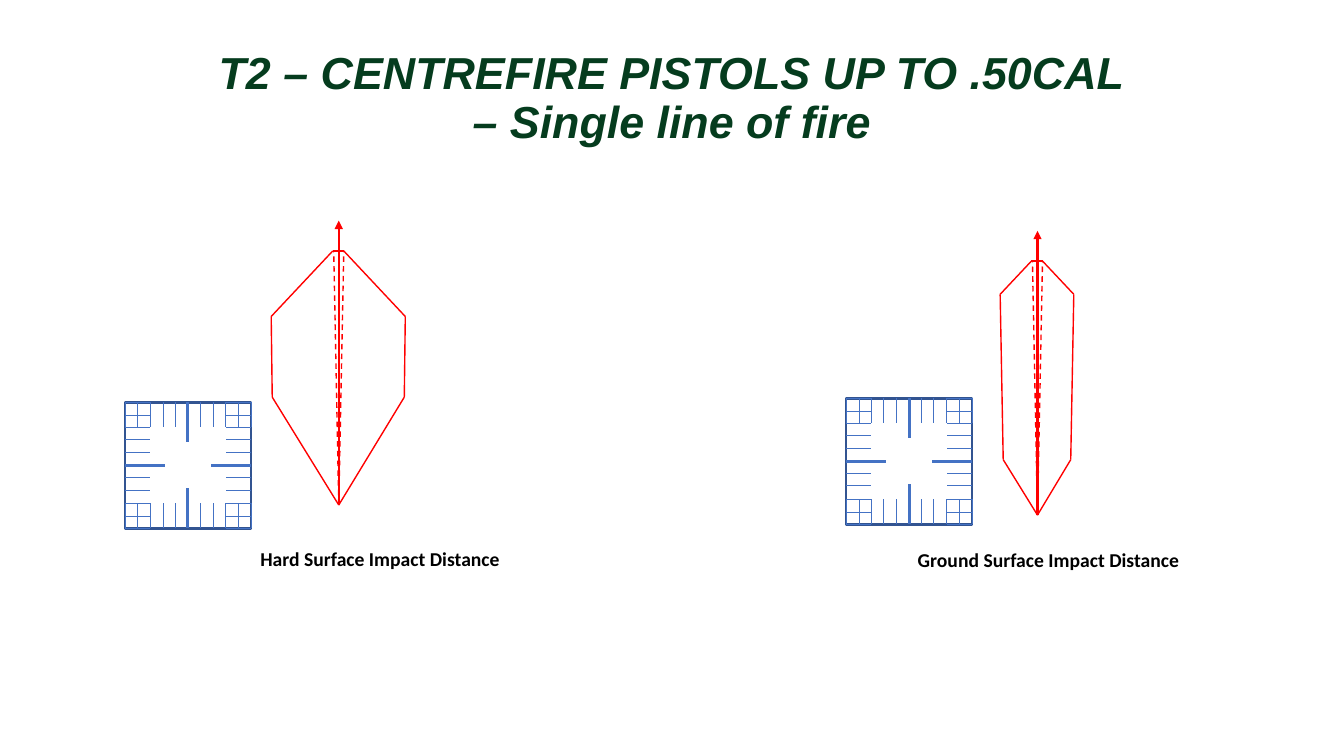
from lxml.etree import SubElement
from pptx import Presentation
from pptx.dml.color import RGBColor
from pptx.enum.dml import MSO_LINE
from pptx.enum.shapes import MSO_CONNECTOR, MSO_SHAPE
from pptx.enum.text import MSO_ANCHOR, PP_ALIGN
from pptx.oxml.ns import qn
from pptx.util import Pt

PX = 9144  # 100 px to the inch
THEME = {
    "title": RGBColor.from_string("053C1E"),
    "label": RGBColor.from_string("000000"),
    "fire": RGBColor.from_string("FF0000"),
    "frame": RGBColor.from_string("325491"),
    "tick": RGBColor.from_string("4472C4"),
    "title_size": 32,
    "label_size": 14,
}


def draw_line(group, start, end, color, width, dash=False, arrow=False):
    line = group.shapes.add_connector(
        MSO_CONNECTOR.STRAIGHT, *(round(v) * PX for v in (*start, *end)))
    line.line.color.rgb = THEME[color]
    line.line.width = Pt(width)
    if dash:
        line.line.dash_style = MSO_LINE.DASH
    props = line.element.spPr
    if arrow:
        SubElement(props.find(qn("a:ln")), qn("a:tailEnd"), type="triangle")
    SubElement(props, qn("a:effectLst"))


def add_text(box, lines, role, font, anchor, spacing=None, italic=None):
    left, top, width, height = (v * PX for v in box)
    frame = slide.shapes.add_textbox(left, top, width, height).text_frame
    frame.word_wrap = True
    frame.vertical_anchor = anchor
    for i, line in enumerate(lines):
        para = frame.paragraphs[0] if i == 0 else frame.add_paragraph()
        para.alignment = PP_ALIGN.CENTER
        para.line_spacing = spacing
        run = para.add_run()
        run.text = line
        run.font.name = font
        run.font.size = Pt(THEME[role + "_size"])
        run.font.color.rgb = THEME[role]
        run.font.bold = True
        run.font.italic = italic


deck = Presentation()
deck.slide_width, deck.slide_height = 1333 * PX, 750 * PX
slide = deck.slides.add_slide(deck.slide_layouts[6])

add_text((0, 43, 1333, 111),
         ["T2 – CENTREFIRE PISTOLS UP TO .50CAL", "– Single line of fire"],
         "title", "Arial", MSO_ANCHOR.MIDDLE, 0.9, True)

# Grid corner, muzzle point, then the outline as offsets from the muzzle
ranges = [
    ((839, 395), (1029, 511),
     [(-34, -55), (-37, -219), (-6, -252), (5, -252), (36, -219), (33, -55)]),
    ((124, 399), (336, 501),
     [(-66, -107), (-67, -187), (-6, -252), (5, -252), (66, -187), (65, -107)]),
]
SIDE = 125
for (left, top), (x, y), outline in ranges:
    group = slide.shapes.add_group_shape()
    square = group.shapes.add_shape(
        MSO_SHAPE.RECTANGLE, left * PX, top * PX, SIDE * PX, SIDE * PX)
    square.shadow.inherit = False
    square.fill.background()
    square.line.color.rgb = THEME["frame"]
    square.line.width = Pt(2)

    right, base = left + SIDE, top + SIDE
    for i in range(11):
        size, width = (40, 1.75) if i == 5 else (25, 0.5)
        across, down = left + SIDE * i / 10, top + SIDE * i / 10
        for start, end in [
            ((left, down), (left + size, down)),
            ((right, down), (right - size, down)),
            ((across, top), (across, top + size)),
            ((across, base), (across, base - size)),
        ]:
            draw_line(group, start, end, "tick", width)

    draw_line(group, (x, y), (x, y - 282), "fire", 1.5, arrow=True)
    for edge in (-5, 5):
        draw_line(group, (x, y), (x + edge, y - 252), "fire", 1, dash=True)
    points = [(x, y), *((x + dx, y + dy) for dx, dy in outline), (x, y)]
    for start, end in zip(points, points[1:]):
        draw_line(group, start, end, "fire", 1)

labels = [
    ((188, 538, 378, 34), "Hard Surface Impact Distance"),
    ((851, 539, 378, 57), "Ground Surface Impact Distance"),
]
for box, label in labels:
    add_text(box, [label], "label", "Calibri", MSO_ANCHOR.TOP)

deck.save("out.pptx")
